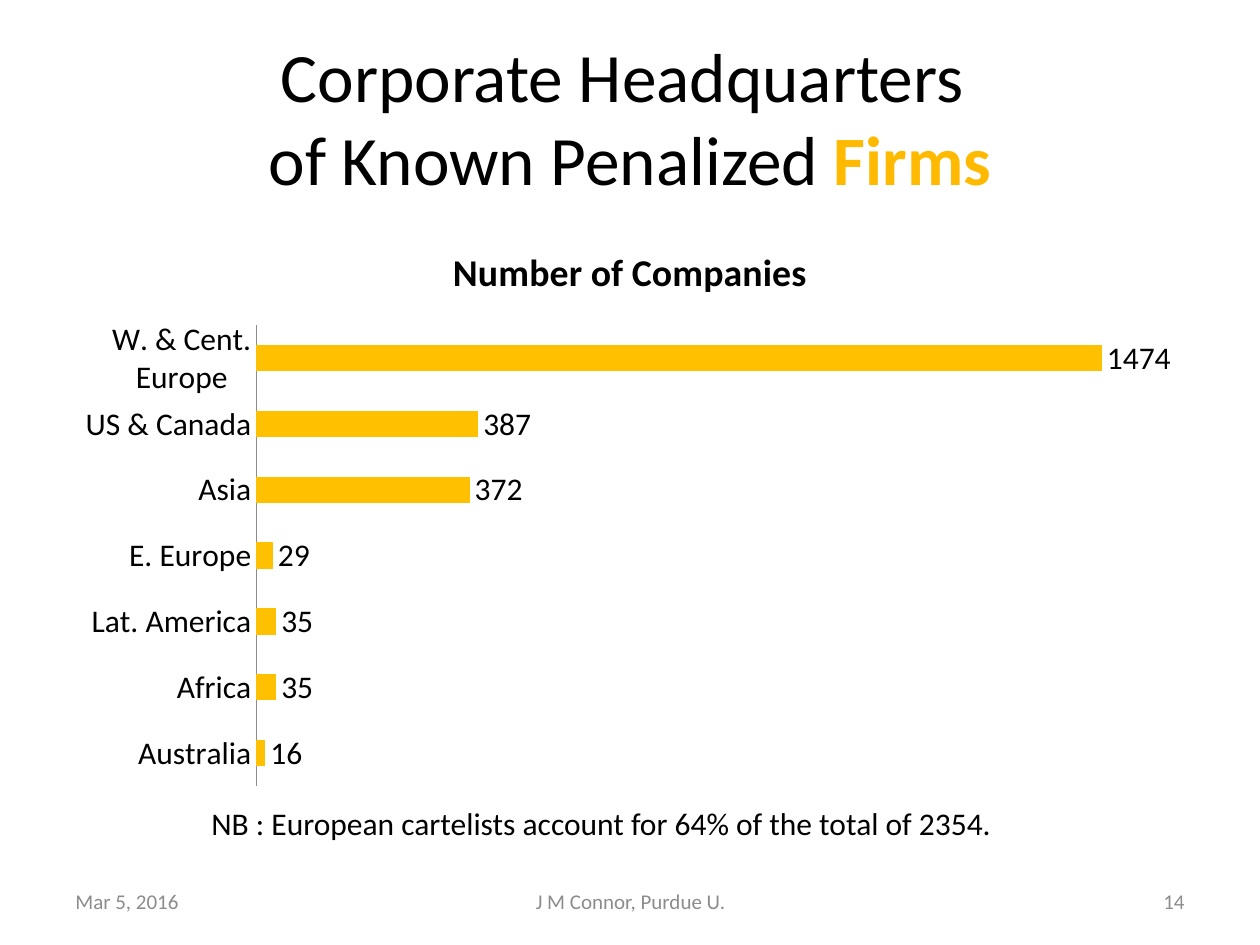
from dataclasses import dataclass

import pptx
import pptx.chart.data
import pptx.dml.color
import pptx.enum.chart
import pptx.enum.text
import pptx.util

Inches = pptx.util.Inches
ALIGN = pptx.enum.text.PP_ALIGN
ANCHOR = pptx.enum.text.MSO_ANCHOR


@dataclass(frozen=True)
class Theme:
    font: str = "Calibri"
    text: str = "000000"
    accent: str = "FFBA00"
    bar: str = "FFC000"
    muted: str = "8C8C8C"
    title_size: float = 39.6
    chart_title_size: float = 21.6
    body_size: float = 18
    footer_size: float = 12


def rgb(value):
    return pptx.dml.color.RGBColor.from_string(value)


class SlideBuilder:
    def __init__(self, s, theme):
        self.s = s
        self.theme = theme

    def style(self, font, size, color, bold=False):
        values = {"name": self.theme.font, "size": pptx.util.Pt(size), "bold": bold}
        for name, value in values.items():
            setattr(font, name, value)
        font.color.rgb = rgb(color)

    def text(self, box, lines, size, align=ALIGN.LEFT, anchor=ANCHOR.MIDDLE):
        """Add one paragraph; each line is a list of (text, color, bold) runs."""
        sp = self.s.shapes.add_textbox(*map(Inches, box))
        tf = sp.text_frame
        for name, value in {"word_wrap": True, "vertical_anchor": anchor}.items():
            setattr(tf, name, value)
        p = tf.paragraphs[0]
        p.alignment = align
        for i, line in enumerate(lines):
            if i:
                p.add_line_break()
            for content, color, bold in line:
                r = p.add_run()
                r.text = content
                self.style(r.font, size, color, bold)

    def footer(self, left, width, content, align):
        self.text((left, 6.95, width, 0.4), [[(content, self.theme.muted, False)]],
                  self.theme.footer_size, align)

    def bar_chart(self, box, title, counts):
        t = self.theme
        data = pptx.chart.data.CategoryChartData()
        data.categories = list(counts)
        data.add_series(title, list(counts.values()))
        chart = self.s.shapes.add_chart(
            pptx.enum.chart.XL_CHART_TYPE.BAR_CLUSTERED, *map(Inches, box), data).chart
        self.style(chart.font, t.body_size, t.text)
        chart.has_legend = False
        chart.has_title = True
        p = chart.chart_title.text_frame.paragraphs[0]
        r = p.add_run()
        r.text = title
        self.style(r.font, t.chart_title_size, t.text, True)

        tick = pptx.enum.chart.XL_TICK_MARK.NONE
        for axis in (chart.category_axis, chart.value_axis):
            for name in ("major_tick_mark", "minor_tick_mark"):
                setattr(axis, name, tick)
            axis.has_major_gridlines = False
        chart.value_axis.visible = False
        line = chart.category_axis.format.line
        line.color.rgb = rgb(t.muted)
        line.width = pptx.util.Pt(0.75)

        plot = chart.plots[0]
        for name, value in {"gap_width": 150, "overlap": -25,
                            "vary_by_categories": False}.items():
            setattr(plot, name, value)
        series = plot.series[0]
        series.format.fill.solid()
        series.format.fill.fore_color.rgb = rgb(t.bar)
        labels = series.data_labels
        labels.show_value = True
        labels.position = pptx.enum.chart.XL_LABEL_POSITION.OUTSIDE_END
        self.style(labels.font, t.body_size, t.text)


def main():
    prs = pptx.Presentation()
    prs.slide_width, prs.slide_height = Inches(10), Inches(7.5)
    theme = Theme()
    slide = SlideBuilder(prs.slides.add_slide(prs.slide_layouts[6]), theme)

    slide.text((0.5, 0.3, 9, 1.25),
               [[("Corporate Headquarters ", theme.text, False)],
                [("of Known Penalized ", theme.text, False),
                 ("Firms", theme.accent, True)]],
               theme.title_size, ALIGN.CENTER)

    company_counts = {
        "Australia": 16,
        "Africa": 35,
        "Lat. America": 35,
        "E. Europe": 29,
        "Asia": 372,
        "US & Canada": 387,
        "W. & Cent. Europe": 1474,
    }
    slide.bar_chart((0.5, 1.75, 9, 4.58), "Number of Companies", company_counts)

    note = "NB : European cartelists account for 64% of the total of 2354."
    slide.text((1.58, 6.33, 7.33, 0.4), [[(note, theme.text, False)]],
               theme.body_size, anchor=ANCHOR.TOP)

    slide.footer(0.5, 2.33, "Mar 5, 2016", ALIGN.LEFT)
    slide.footer(3.42, 3.17, "J M Connor, Purdue U.", ALIGN.CENTER)
    slide.footer(7.17, 2.33, "14", ALIGN.RIGHT)
    prs.save("out.pptx")


if __name__ == "__main__":
    main()
